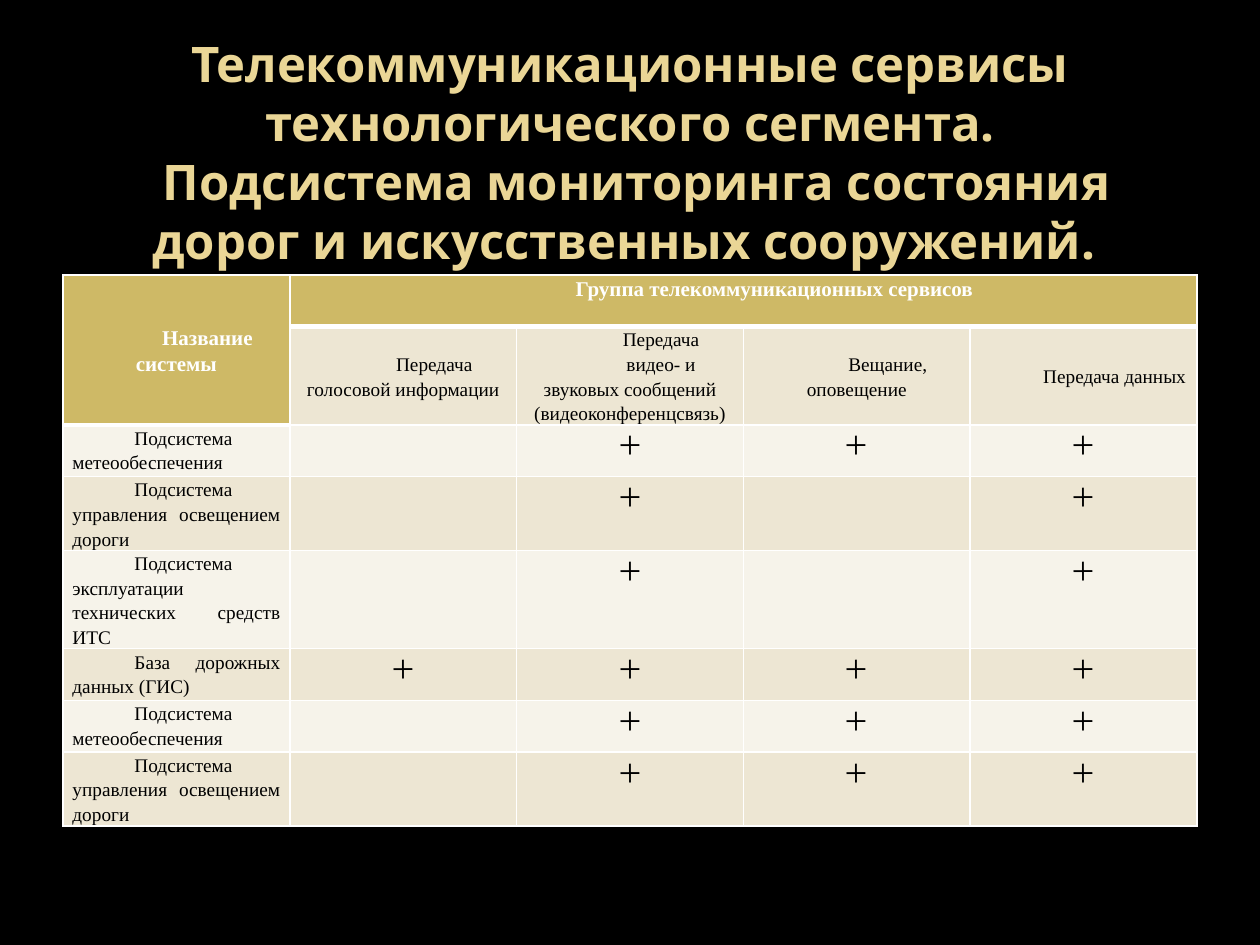
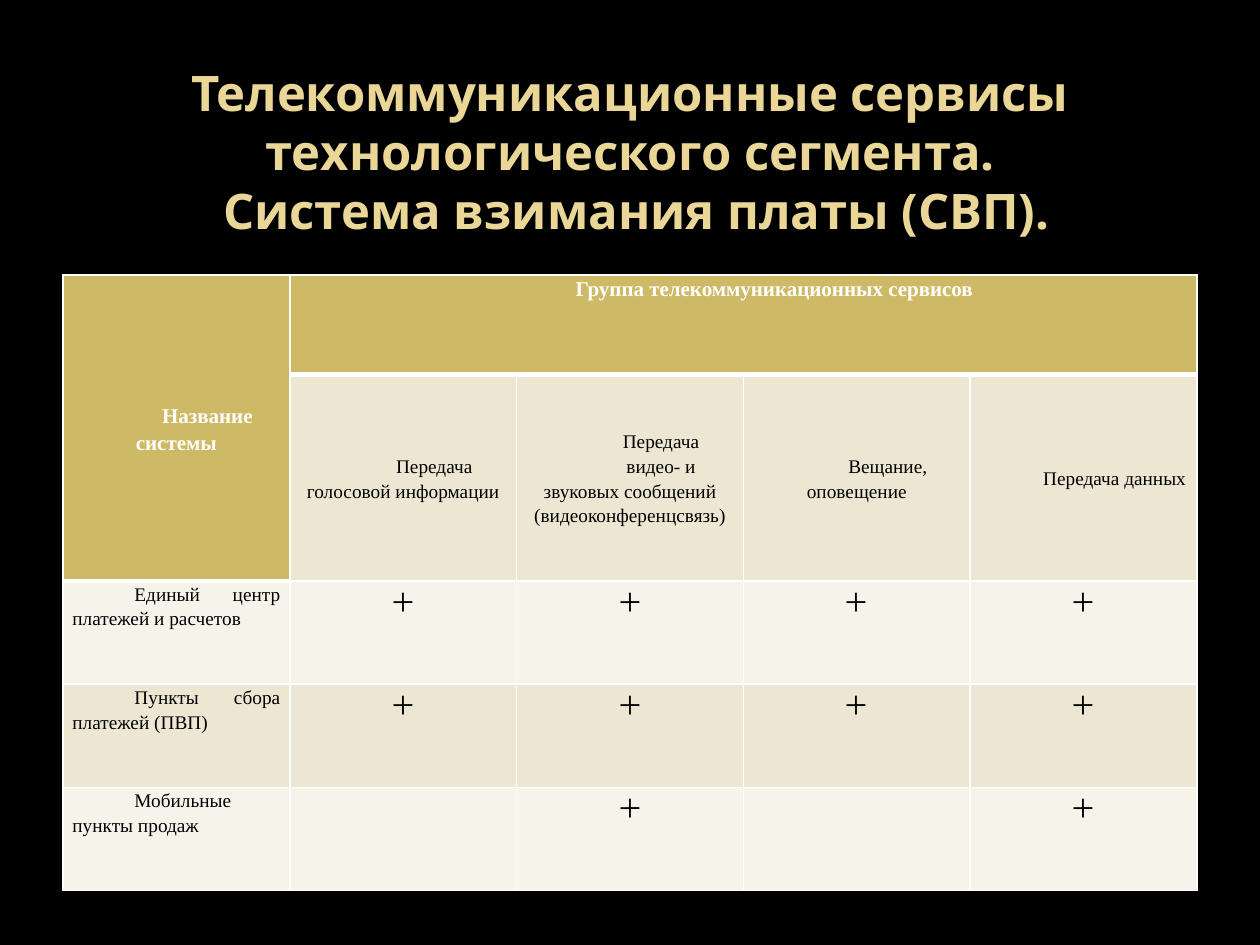
from lxml.etree import SubElement
from pptx import Presentation
from pptx.dml.color import RGBColor
from pptx.enum.text import MSO_ANCHOR as Anchor, MSO_AUTO_SIZE as AutoSize, PP_ALIGN as Align
from pptx.oxml.ns import qn
from pptx.util import Pt

TITLE_START = "Телекоммуникационные сервисы технологического сегмента."
CORNER = "Название системы"
GROUP = "Группа телекоммуникационных сервисов"
SERVICES = [
    ["Передача голосовой информации"],
    ["Передача", "видео- и звуковых сообщений (видеоконференцсвязь)"],
    ["Вещание, оповещение"],
    ["Передача данных"],
]

# Each system is followed by one mark per service: "+" provided, "-" left empty.
SLIDES = [
    {
        "subject": " Подсистема мониторинга состояния дорог и искусственных сооружений. ",
        "heading_heights": [29.5, 29.5],
        "system_height": 29.5,
        "systems": [
            ("Подсистема метеообеспечения", "-+++"),
            ("Подсистема управления освещением дороги", "-+-+"),
            ("Подсистема эксплуатации технических средств ИТС", "-+-+"),
            ("База дорожных данных (ГИС)", "++++"),
            ("Подсистема метеообеспечения", "-+++"),
            ("Подсистема управления освещением дороги", "-+++"),
        ],
    },
    {
        "subject": " Система взимания платы (СВП).",
        "heading_heights": [57, 118],
        "system_height": 59,
        "systems": [
            ("Единый центр платежей и расчетов", "++++"),
            ("Пункты сбора платежей (ПВП)", "++++"),
            ("Мобильные пункты продаж", "-+-+"),
        ],
    },
]

BLACK, WHITE, GOLD = "000000", "FFFFFF", "CEB966"
BANDS = ["F6F3EA", "EDE6D3"]
TITLE_GRADIENT = [(0.73, "EAD696"), (1, "E7D081")]
TITLE_FONT, TABLE_FONT, MARK_FONT = "Noto Sans", "Times New Roman", "TeX Gyre Pagella"
LEFT, WIDTH = 36, 648
TITLE_TOP, TITLE_HEIGHT, TABLE_TOP = 21.6, 129.6, 157
CELL_INSET, FIRST_LINE_INDENT = 5.4, 35.45
THIN, THICK = 1, 3


def rgb(value):
    return RGBColor.from_string(value)


def style_font(font, name, size, bold=False):
    font.name, font.size, font.bold = name, Pt(size), bold


def add_title(slide, subject):
    title = slide.shapes.title
    title.left, title.top = Pt(LEFT), Pt(TITLE_TOP)
    title.width, title.height = Pt(WIDTH), Pt(TITLE_HEIGHT)
    frame = title.text_frame
    frame.auto_size = AutoSize.NONE
    frame.vertical_anchor = Anchor.MIDDLE
    paragraph = frame.paragraphs[0]
    paragraph.alignment = Align.CENTER
    for line, words in enumerate([TITLE_START, subject]):
        if line:
            paragraph.add_line_break()
        run = paragraph.add_run()
        run.text = words
        style_font(run.font, TITLE_FONT, 28, True)
        fill = run.font.fill
        fill.gradient()
        fill.gradient_angle = 280
        for stop, (position, color) in zip(fill.gradient_stops, TITLE_GRADIENT):
            stop.position = position
            stop.color.rgb = rgb(color)


def is_heading(row, column):
    return row == 0 or (row == 1 and column == 0)


def format_cell(cell, row, column):
    """Give a cell its borders, with a thick line under the headings, and its fill."""
    properties = cell._tc.get_or_add_tcPr()
    heading = is_heading(row, column)
    under_heading = row > 0 and is_heading(row - 1, column)
    widths = {
        "L": THIN,
        "R": THIN,
        "T": THICK if under_heading else THIN,
        "B": THICK if heading else THIN,
    }
    for side, width in widths.items():
        line = SubElement(properties, qn(f"a:ln{side}"), w=str(Pt(width)))
        solid = SubElement(line, qn("a:solidFill"))
        SubElement(solid, qn("a:srgbClr"), val=WHITE)
    cell.fill.solid()
    cell.fill.fore_color.rgb = rgb(GOLD if heading else BANDS[row % 2])


def write_label(cell, lines, size=11, color=BLACK, bold=False,
                align=Align.CENTER, anchor=Anchor.MIDDLE):
    cell.margin_left = cell.margin_right = Pt(CELL_INSET)
    cell.margin_top = cell.margin_bottom = 0
    cell.vertical_anchor = anchor
    frame = cell.text_frame
    for number, words in enumerate(lines):
        paragraph = frame.add_paragraph() if number else frame.paragraphs[0]
        paragraph.alignment = align
        paragraph.line_spacing = 1.15
        paragraph._p.get_or_add_pPr().set("indent", str(Pt(FIRST_LINE_INDENT)))
        run = paragraph.add_run()
        run.text = words
        style_font(run.font, TABLE_FONT, size, bold)
        run.font.color.rgb = rgb(color)


def write_mark(cell):
    paragraph = cell.text_frame.paragraphs[0]
    paragraph.alignment = Align.CENTER
    run = paragraph.add_run()
    run.text = "+"
    style_font(run.font, MARK_FONT, 18)
    run.font.color.rgb = rgb(BLACK)


def add_service_table(slide, heading_heights, system_height, systems):
    heights = heading_heights + [system_height] * len(systems)
    columns = len(SERVICES) + 1
    table = slide.shapes.add_table(
        len(heights), columns, Pt(LEFT), Pt(TABLE_TOP), Pt(WIDTH), Pt(sum(heights))
    ).table
    table.first_row = table.horz_banding = False
    for row, height in enumerate(heights):
        table.rows[row].height = Pt(height)
        for column in range(columns):
            format_cell(table.cell(row, column), row, column)

    table.cell(0, 0).merge(table.cell(1, 0))
    table.cell(0, 1).merge(table.cell(0, columns - 1))
    write_label(table.cell(0, 0), [CORNER], 12, WHITE, True)
    write_label(table.cell(0, 1), [GROUP], 12, WHITE, True, anchor=Anchor.TOP)
    for column, service in enumerate(SERVICES, 1):
        write_label(table.cell(1, column), service)
    for row, (system, marks) in enumerate(systems, len(heading_heights)):
        write_label(table.cell(row, 0), [system], align=Align.JUSTIFY, anchor=Anchor.TOP)
        for column, mark in enumerate(marks, 1):
            if mark == "+":
                write_mark(table.cell(row, column))


def main():
    deck = Presentation()
    deck.slide_width, deck.slide_height = Pt(720), Pt(540)
    background = deck.slide_master.background.fill
    background.solid()
    background.fore_color.rgb = rgb(BLACK)
    title_only = deck.slide_layouts[5]
    for content in SLIDES:
        slide = deck.slides.add_slide(title_only)
        add_title(slide, content["subject"])
        add_service_table(slide, content["heading_heights"],
                          content["system_height"], content["systems"])
    deck.save("out.pptx")


if __name__ == "__main__":
    main()
